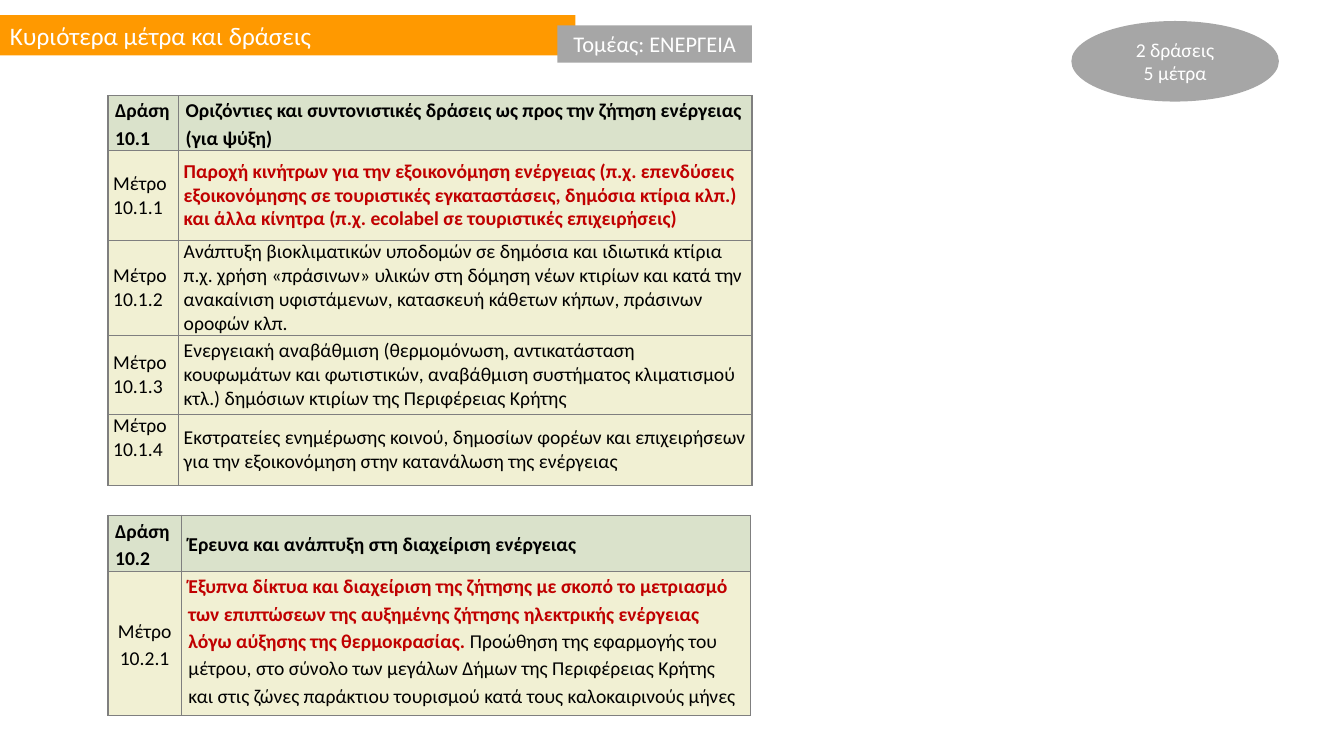
"""Build the slide on the measures and actions of the energy sector."""
from lxml.etree import SubElement
from pptx import Presentation
from pptx.dml.color import RGBColor
from pptx.enum.shapes import MSO_SHAPE as Shape
from pptx.enum.text import MSO_ANCHOR as Anchor, PP_ALIGN as Align
from pptx.oxml.ns import qn
from pptx.util import Cm, Pt

ORANGE, GREY, WHITE, BLACK, RED = "FF9900", "A6A6A6", "FFFFFF", "000000", "C00000"
GREEN, CREAM, BORDER = "DAE2CB", "F1F0D3", "7F7F7F"


def color(value):
    return RGBColor.from_string(value)


class SlideBuilder:
    def __init__(self, slide, font="Calibri"):
        self.slide = slide
        self.font = font

    def style(self, font, size, ink, bold=False):
        font.name, font.size, font.bold = self.font, Pt(size), bold
        font.color.rgb = color(ink)

    def label(self, kind, box, fill, lines, size, align=Align.CENTER):
        shape = self.slide.shapes.add_shape(kind, *map(Cm, box))
        shape.shadow.inherit = False
        shape.fill.solid()
        shape.fill.fore_color.rgb = color(fill)
        shape.line.fill.background()
        frame = shape.text_frame
        frame.word_wrap = True
        frame.vertical_anchor = Anchor.MIDDLE
        for index, line in enumerate(lines):
            paragraph = frame.add_paragraph() if index else frame.paragraphs[0]
            paragraph.text = line
            paragraph.alignment = align
            self.style(paragraph.font, size, WHITE)

    def borders(self, cell):
        properties = cell._tc.get_or_add_tcPr()
        for side in ("a:lnL", "a:lnR", "a:lnT", "a:lnB"):
            line = SubElement(properties, qn(side), w=str(Pt(1)))
            fill = SubElement(line, qn("a:solidFill"))
            SubElement(fill, qn("a:srgbClr"), val=BORDER)

    def cell(self, cell, runs, fill, margin, spacing=None, gap=0,
             align=Align.LEFT, anchor=Anchor.MIDDLE):
        self.borders(cell)
        cell.fill.solid()
        cell.fill.fore_color.rgb = color(fill)
        cell.margin_left = cell.margin_right = Cm(margin)
        cell.margin_top = cell.margin_bottom = 0
        cell.vertical_anchor = anchor
        paragraph = cell.text_frame.paragraphs[0]
        paragraph.alignment = align
        paragraph.line_spacing = spacing
        paragraph.space_before = paragraph.space_after = Pt(gap)
        for text, ink, bold in runs:
            run = paragraph.add_run()
            run.text = text
            self.style(run.font, 14, ink, bold)

    def table(self, left, top, widths, heights, header):
        frame = self.slide.shapes.add_table(
            len(heights), len(widths), Cm(left), Cm(top),
            Cm(sum(widths)), Cm(sum(heights)))
        table = frame.table
        for column, width in zip(table.columns, widths):
            column.width = Cm(width)
        for row, height in zip(table.rows, heights):
            row.height = Cm(height)
        for column, text in enumerate(header):
            self.cell(table.cell(0, column), [(text, BLACK, True)], GREEN, 0.18, 1.15, 3)
        return table


def main():
    presentation = Presentation()
    presentation.slide_width, presentation.slide_height = Cm(33.87), Cm(19.05)
    builder = SlideBuilder(presentation.slides.add_slide(presentation.slide_layouts[6]))

    builder.label(Shape.RECTANGLE, (0, 0.38, 14.5, 1.02), ORANGE,
                  ["Κυριότερα μέτρα και δράσεις"], 18, Align.LEFT)
    builder.label(Shape.RECTANGLE, (14.05, 0.64, 4.9, 0.94), GREY, ["Τομέας: ΕΝΕΡΓΕΙΑ"], 16)
    builder.label(Shape.OVAL, (27, 0.53, 5.23, 2.03), GREY, ["2 δράσεις", "5 μέτρα"], 14)

    demand_measures = [
        ("Παροχή κινήτρων για την εξοικονόμηση ενέργειας (π.χ. επενδύσεις "
         "εξοικονόμησης σε τουριστικές εγκαταστάσεις, δημόσια κτίρια κλπ.) "
         "και άλλα κίνητρα (π.χ. ecolabel σε τουριστικές επιχειρήσεις)", RED, True),
        ("Ανάπτυξη βιοκλιματικών υποδομών σε δημόσια και ιδιωτικά κτίρια "
         "π.χ. χρήση «πράσινων» υλικών στη δόμηση νέων κτιρίων και κατά την "
         "ανακαίνιση υφιστάμενων, κατασκευή κάθετων κήπων, πράσινων "
         "οροφών κλπ.", BLACK, False),
        ("Ενεργειακή αναβάθμιση (θερμομόνωση, αντικατάσταση "
         "κουφωμάτων και φωτιστικών, αναβάθμιση συστήματος κλιματισμού "
         "κτλ.) δημόσιων κτιρίων της Περιφέρειας Κρήτης", BLACK, False),
        ("Εκστρατείες ενημέρωσης κοινού, δημοσίων φορέων και "
         "επιχειρήσεων για την εξοικονόμηση στην κατανάλωση της ενέργειας", BLACK, False),
    ]
    demand = builder.table(
        2.72, 2.41, (1.78, 14.45), (1.37, 2.26, 2.36, 1.98, 1.79),
        ("Δράση 10.1", "Οριζόντιες και συντονιστικές δράσεις ως προς την "
                       "ζήτηση ενέργειας (για ψύξη)"))
    for row, measure in enumerate(demand_measures, 1):
        anchor = Anchor.TOP if row == len(demand_measures) else Anchor.MIDDLE
        builder.cell(demand.cell(row, 0), [(f"Μέτρο 10.1.{row}", BLACK, False)],
                     CREAM, 0.13, anchor=anchor)
        builder.cell(demand.cell(row, 1), [measure], CREAM, 0.13)

    research = builder.table(
        2.72, 12.98, (1.85, 14.35), (1.42, 3.63),
        ("Δράση 10.2", "Έρευνα και ανάπτυξη στη διαχείριση ενέργειας"))
    builder.cell(research.cell(1, 0), [("Μέτρο 10.2.1", BLACK, False)],
                 CREAM, 0.18, 1.15, 6, Align.CENTER)
    smart_grids = [
        ("Έξυπνα δίκτυα και διαχείριση της ζήτησης με σκοπό το μετριασμό "
         "των επιπτώσεων της αυξημένης ζήτησης ηλεκτρικής ενέργειας "
         "λόγω αύξησης της θερμοκρασίας. ", RED, True),
        ("Προώθηση της εφαρμογής του μέτρου, στο σύνολο των μεγάλων Δήμων "
         "της Περιφέρειας Κρήτης και στις ζώνες παράκτιου τουρισμού κατά "
         "τους καλοκαιρινούς μήνες", BLACK, False),
    ]
    builder.cell(research.cell(1, 1), smart_grids, CREAM, 0.18, 1.15, 6, anchor=Anchor.TOP)
    presentation.save("out.pptx")


if __name__ == "__main__":
    main()
